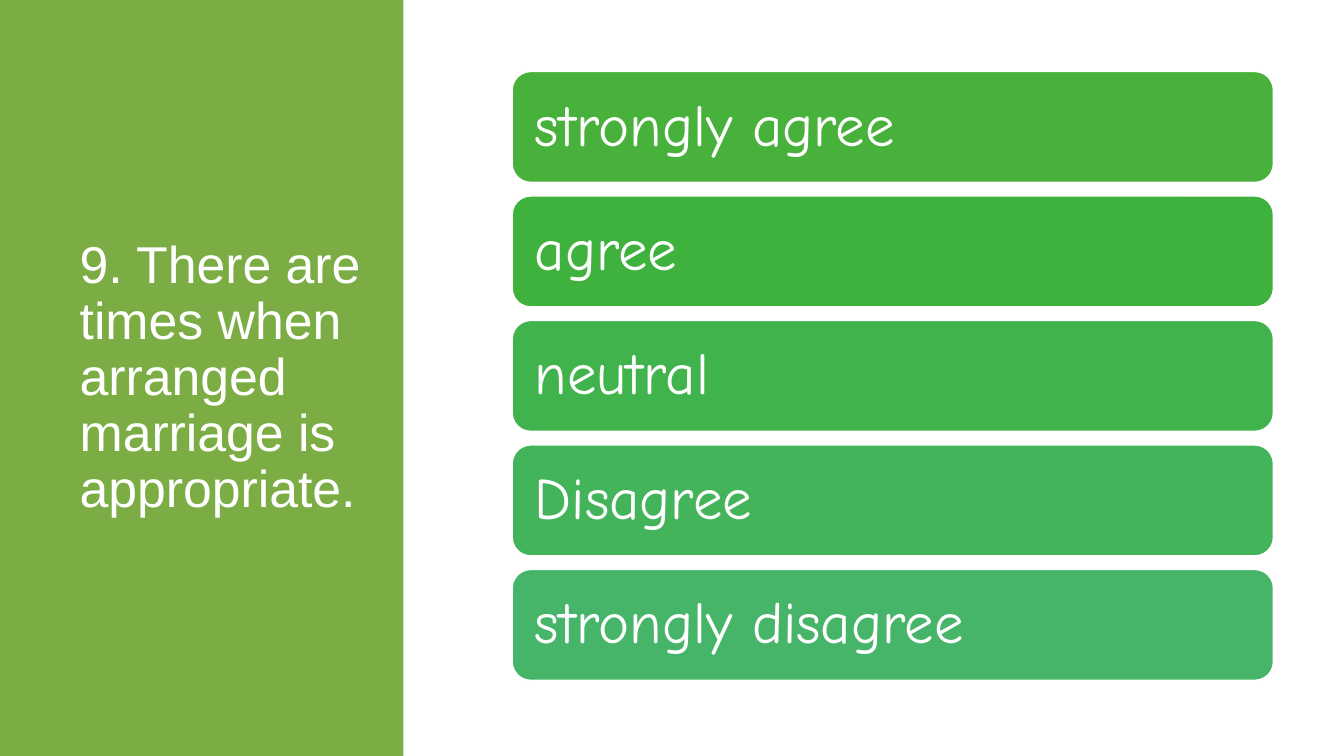
from pptx import Presentation
from pptx.dml.color import RGBColor
from pptx.enum.shapes import MSO_SHAPE as Shape
from pptx.enum.text import MSO_ANCHOR as Anchor, MSO_AUTO_SIZE as Fit, PP_ALIGN as Align
from pptx.util import Inches, Pt

# Content
QUESTION = "9. There are times when arranged marriage is appropriate."
ANSWERS = [
    ("strongly agree", "48B13B"),
    ("agree", "3FB23E"),
    ("neutral", "41B34C"),
    ("Disagree", "44B45B"),
    ("strongly disagree", "47B569"),
]
WHITE, GREEN = "FFFFFF", "7BAD44"

# Wavy right edge of the panel, from top to bottom
EDGE = [
    (4.46, 0), (4.455, 0.32), (4.46, 0.63), (4.46, 1.02), (4.453, 1.22),
    (4.46, 1.41), (4.467, 1.58), (4.46, 1.74), (4.455, 2.04), (4.46, 2.33),
    (4.47, 2.63), (4.467, 2.93), (4.45, 3.22), (4.443, 3.52), (4.45, 3.83),
    (4.465, 4.15), (4.47, 4.46), (4.46, 4.86), (4.465, 5.07), (4.45, 5.28),
    (4.45, 5.49), (4.465, 5.75), (4.47, 6), (4.457, 6.2), (4.46, 6.39),
    (4.467, 6.62), (4.46, 6.85), (4.46, 7.09), (4.47, 7.33), (4.46, 7.5),
]

# Card layout
LEFT, TOP, WIDE, HIGH, STEP = 5.08, 0.71, 7.55, 1.1, 1.235
INSET = 0.17


def color(code):
    return RGBColor.from_string(code)


def paint(shape, fill):
    shape.shadow.inherit = False
    shape.fill.solid()
    shape.fill.fore_color.rgb = color(fill)


def write(shape, text, font, size, inset):
    frame = shape.text_frame
    frame.text = text
    frame.word_wrap = True
    frame.auto_size = Fit.NONE
    frame.vertical_anchor = Anchor.MIDDLE
    frame.margin_left = frame.margin_right = Inches(inset)
    para = frame.paragraphs[0]
    para.alignment = Align.LEFT
    para.line_spacing = 0.9
    face = para.runs[0].font
    face.name, face.size = font, Pt(size)
    face.color.rgb = color(WHITE)


deck = Presentation()
deck.slide_width, deck.slide_height = Inches(13.33), Inches(7.5)
slide = deck.slides.add_slide(deck.slide_layouts[5])
shapes = slide.shapes

# Green panel
pen = shapes.build_freeform(0, 0, scale=Inches(1))
pen.add_line_segments(EDGE + [(0, 7.5)], close=True)
panel = pen.convert_to_shape()
paint(panel, GREEN)
panel.line.fill.background()

# Question, raised above the panel
title = shapes.title
title.left, title.top = Inches(0.69), Inches(0.7)
title.width, title.height = Inches(3.39), Inches(6.11)
write(title, QUESTION, "Arial", 37, 0.1)
panel.element.addnext(title.element)

# Answer cards
for row, (answer, fill) in enumerate(ANSWERS):
    card = shapes.add_shape(
        Shape.ROUNDED_RECTANGLE, Inches(LEFT), Inches(TOP + row * STEP),
        Inches(WIDE), Inches(HIGH))
    paint(card, fill)
    card.line.color.rgb = color(WHITE)
    card.line.width = Pt(1)
    write(card, answer, "Comic Neue", 42, INSET)

deck.save("out.pptx")
